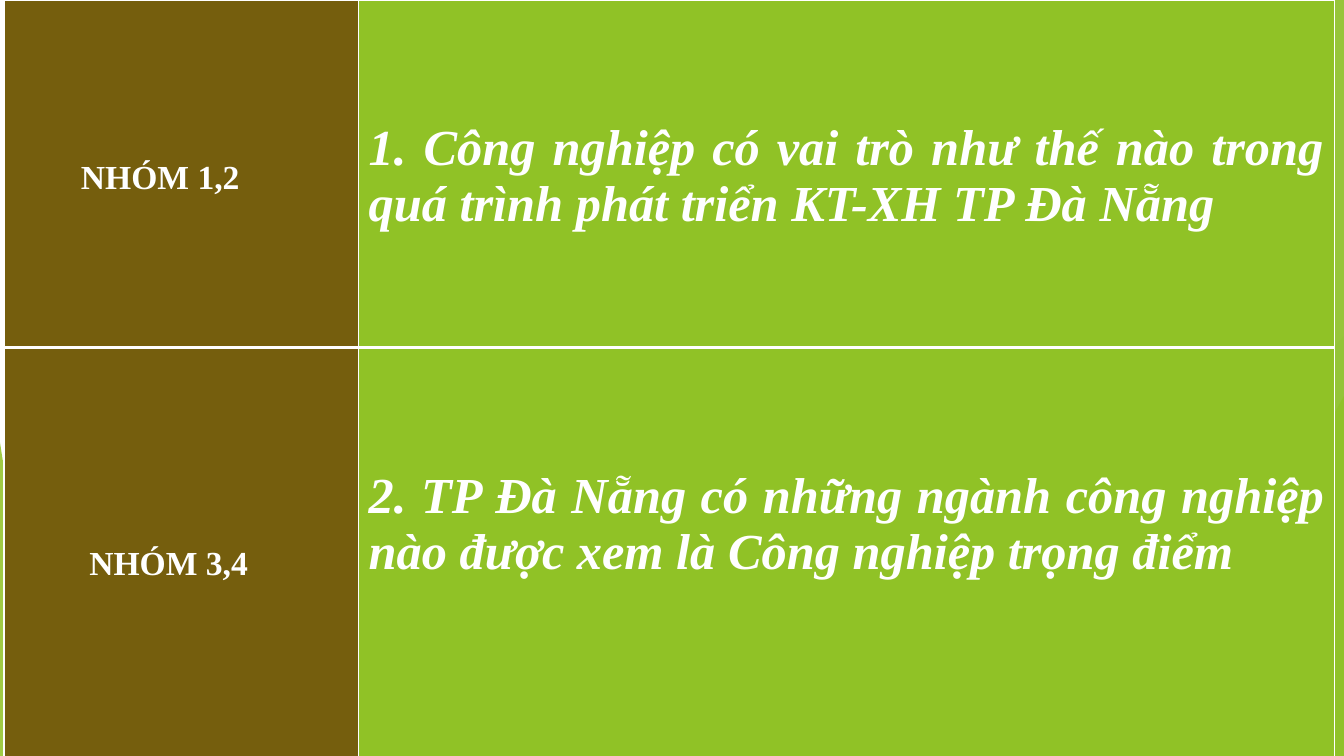
import lxml.etree
import pptx
import pptx.dml.color
import pptx.enum.shapes
import pptx.enum.text
import pptx.oxml.ns
import pptx.util

Cm = pptx.util.Cm
RGBColor = pptx.dml.color.RGBColor
qn = pptx.oxml.ns.qn

WHITE = RGBColor(0xFF, 0xFF, 0xFF)
BROWN = RGBColor(0x75, 0x5E, 0x0D)
GREEN = RGBColor(0x90, 0xC2, 0x26)
LEAF = RGBColor(0x54, 0xA0, 0x21)
FOREST = RGBColor(0x3F, 0x78, 0x19)
LIME = RGBColor(0xC0, 0xE4, 0x74)
PALE_GREY = RGBColor(0xD9, 0xD9, 0xD9)

WIDTH, HEIGHT = 33.87, 19.05


class SlideBuilder:
    font_name = "Times New Roman"

    def __init__(self, deck):
        self.page = deck.slides.add_slide(deck.slide_layouts[6])

    def line(self, start, end, color, width):
        line = self.page.shapes.add_connector(
            pptx.enum.shapes.MSO_CONNECTOR.STRAIGHT,
            Cm(start[0]), Cm(start[1]), Cm(end[0]), Cm(end[1]))
        line.line.color.rgb = color
        line.line.width = pptx.util.Pt(width)
        properties = line._element.spPr
        lxml.etree.SubElement(properties, qn("a:effectLst"))

    def paint(self, shape, color, opacity):
        shape.shadow.inherit = False
        shape.line.fill.background()
        shape.fill.solid()
        shape.fill.fore_color.rgb = color
        color_node = shape._element.spPr.find(qn("a:solidFill"))[0]
        alpha = lxml.etree.SubElement(color_node, qn("a:alpha"))
        alpha.set("val", str(opacity * 1000))

    def band(self, top_x, bottom_x, color, opacity):
        """Full-height band from a slanted left side to the right edge."""
        top = -0.02
        outline = self.page.shapes.build_freeform(Cm(top_x), Cm(top))
        corners = [(WIDTH, top), (WIDTH, HEIGHT), (bottom_x, HEIGHT)]
        outline.add_line_segments([(Cm(x), Cm(y)) for x, y in corners])
        self.paint(outline.convert_to_shape(), color, opacity)

    def triangle(self, left, top, width, tip, color, opacity):
        """Triangle that stands on the bottom edge of the slide."""
        shape = self.page.shapes.add_shape(
            pptx.enum.shapes.MSO_SHAPE.ISOSCELES_TRIANGLE,
            Cm(left), Cm(top), Cm(width), Cm(HEIGHT - top))
        shape.adjustments[0] = tip
        self.paint(shape, color, opacity)

    def table(self, left, top, columns, rows):
        frame = self.page.shapes.add_table(
            len(rows), len(columns), Cm(left), Cm(top),
            Cm(sum(columns)), Cm(sum(rows)))
        table = frame.table
        table.first_row = table.horz_banding = False
        for column, width in zip(table.columns, columns):
            column.width = Cm(width)
        for row, height in zip(table.rows, rows):
            row.height = Cm(height)
        return table

    def cell(self, cell, text, size, italic, fill, left, top, borders):
        cell.margin_left, cell.margin_top = Cm(left), Cm(top)
        cell.fill.solid()
        cell.fill.fore_color.rgb = fill
        para = cell.text_frame.paragraphs[0]
        para.alignment = pptx.enum.text.PP_ALIGN.JUSTIFY
        span = para.add_run()
        span.text = text
        span.font.name = self.font_name
        span.font.size = pptx.util.Pt(size)
        span.font.bold = True
        span.font.italic = italic
        span.font.color.rgb = WHITE
        self.borders(cell, borders)

    def borders(self, cell, widths):
        properties = cell._tc.get_or_add_tcPr()
        for index, (side, width) in enumerate(zip("LRTB", widths)):
            border = lxml.etree.Element(qn("a:ln" + side))
            border.set("w", str(pptx.util.Pt(width)))
            fill = lxml.etree.SubElement(border, qn("a:solidFill"))
            lxml.etree.SubElement(fill, qn("a:srgbClr")).set("val", str(WHITE))
            properties.insert(index, border)


def main():
    deck = pptx.Presentation()
    deck.slide_width, deck.slide_height = Cm(WIDTH), Cm(HEIGHT)
    builder = SlideBuilder(deck)

    # Green facets along the slide edges
    builder.line((WIDTH, 10.24), (20.62, HEIGHT), PALE_GREY, 0.75)
    builder.band(31.19, 25.5, GREEN, 30)
    builder.band(26.67, 30.05, GREEN, 20)
    builder.triangle(24.82, 8.46, 9.05, 1, LEAF, 72)
    builder.band(25.93, 32.79, FOREST, 70)
    builder.band(33.1, 30.28, LIME, 70)
    builder.band(30.38, 33.48, GREEN, 65)
    builder.triangle(28.8, 9.98, 5.07, 1, GREEN, 80)
    builder.triangle(0, 11.15, 1.24, 0, GREEN, 85)

    # Group names and their questions: label, left, top, question, borders
    groups = [
        ("NHÓM 1,2", 1.94, 4.02,
         "1. Công nghiệp có vai trò như thế nào trong quá trình "
         "phát triển KT-XH TP Đà Nẵng", (1, 1, 1, 3)),
        ("NHÓM 3,4", 2.15, 5,
         "2. TP Đà Nẵng có những ngành công nghiệp nào được xem là "
         "Công nghiệp trọng điểm", (1, 1, 3, 1)),
    ]
    table = builder.table(0.1, 0, [8.94, 24.59], [8.76, 10.67])
    for row, (label, left, top, question, borders) in enumerate(groups):
        builder.cell(table.cell(row, 0), label, 24, False, BROWN,
                     left, top, borders)
        builder.cell(table.cell(row, 1), question, 36, True, GREEN,
                     0.25, 3.05, borders)

    deck.save("out.pptx")


if __name__ == "__main__":
    main()
